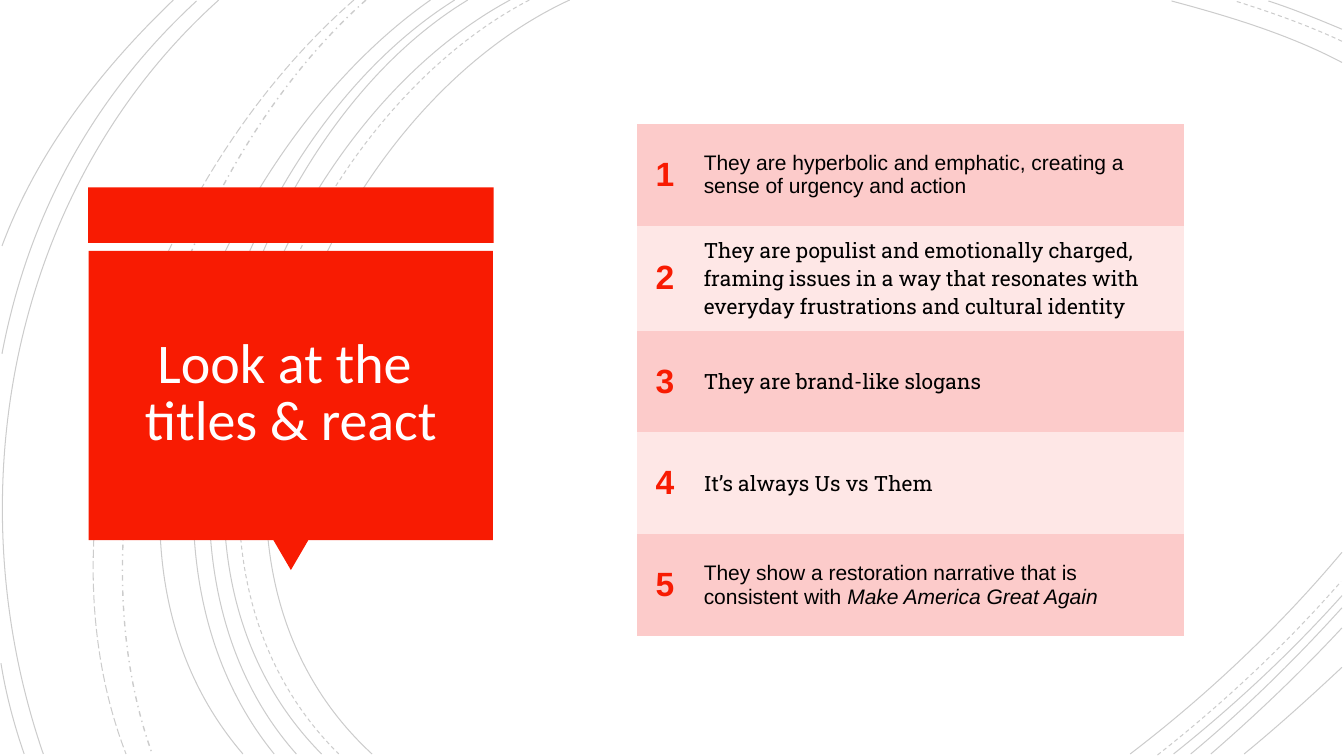
from lxml.etree import SubElement
from pptx import Presentation
from pptx.dml.color import RGBColor
from pptx.enum.dml import MSO_LINE
from pptx.enum.shapes import MSO_SHAPE
from pptx.enum.text import MSO_ANCHOR, PP_ALIGN
from pptx.oxml.ns import qn
from pptx.util import Inches, Pt

RED, WHITE, BLACK = "F81B02", "FFFEFF", "000000"
BANDS = ("FCCBCA", "FEE7E6")
NO_STYLE = "{2D5ABB26-0587-4C30-8999-92F81FD0307C}"
SOLID, DASH = MSO_LINE.SOLID, MSO_LINE.DASH
BOTTOM = 74.8

# Arcs from the top edge to the bottom: start column, two bends, end column, dash
LONG_ARCS = [
    (56.5, (31.5, 11.5), (14.3, 54), 36.9, SOLID),
    (52.5, (28.5, 12.5), (12.3, 53.7), 33.6, DASH),
    (50.6, (27, 12.7), (11, 53.7), 31.9, SOLID),
    (46.4, (24.4, 13.3), (11, 54.1), 29.4, SOLID),
    (45.1, (23.1, 13.8), (9.7, 53.3), 27.2, SOLID),
    (42.7, (21.7, 14.7), (5.3, 52.9), 24.1, SOLID),
    (36.3, (17.6, 16.6), (6.5, 50.9), 15.1, MSO_LINE.DASH_DOT),
    (35.1, (15.7, 16.9), (2.9, 49.9), 12.5, MSO_LINE.LONG_DASH),
    (21.7, (1.1, 18.5), (-4.6, 49), 4.3, SOLID),
]
# Short arcs across the corners: four points, dash
CORNER_ARCS = [
    ((133.1, 6.2), (127.8, 3.4), (121.8, 1.6), (116.2, 0.1), SOLID),
    ((133.1, 4.1), (129.7, 2.5), (126, 1.2), (122.5, 0.1), DASH),
    ((133.1, 2.9), (130.7, 1.9), (128.3, 0.9), (125.8, 0.1), SOLID),
    ((112.1, BOTTOM), (119.7, 69), (126.9, 62.2), (133.1, 54.8), SOLID),
    ((114.8, 74.9), (121.3, 69.8), (127.5, 64), (133, 57.7), DASH),
    ((116.4, BOTTOM), (122.3, 70.1), (128, 64.8), (133.1, 59.1), SOLID),
    ((118.1, BOTTOM), (123.4, 70.4), (128.4, 65.5), (133.1, 60.3), SOLID),
    ((120.1, BOTTOM), (124.6, 70.9), (129, 66.7), (133.1, 62.3), SOLID),
    ((123.4, BOTTOM), (126.7, 72.1), (129.9, 69.2), (133.1, 66.2), SOLID),
    ((19.5, 0.1), (9.2, 9.6), (2.8, 21.4), (0.2, 35.1), SOLID),
    ((0.1, 65.8), (0.6, 68.9), (1.4, 71.9), (2.4, BOTTOM), SOLID),
    ((17.2, 0), (10, 6.9), (3.7, 15), (0.2, 24.4), SOLID),
]
# Each point: row height, font and a list of (text, italic) pieces
POINTS = [
    (10.1, "Arial",
     [("They are hyperbolic and emphatic, creating a sense of urgency and action", False)]),
    (10.4, "Roboto Slab",
     [("They are populist and emotionally charged, framing issues in a way that "
       "resonates with everyday frustrations and cultural identity", False)]),
    (10.1, "Roboto Slab", [("They are brand-like slogans", False)]),
    (10.1, "Roboto Slab", [("It’s always Us vs Them", False)]),
    (10.1, "Arial",
     [("They show a restoration narrative that is consistent with ", False),
      ("Make America Great Again", True)]),
]


def colour(value):
    return RGBColor.from_string(value)


def unit(count):
    """Length of a number of grid columns or rows, ten to the inch."""
    return Inches(count / 10)


def write(para, pieces, font="Arial", size=15, color=BLACK, bold=False,
          align=PP_ALIGN.LEFT, spacing=1.0):
    """Fill a paragraph with (text, italic) pieces; None breaks the line."""
    para.alignment, para.line_spacing = align, spacing
    for piece in pieces:
        if piece is None:
            para.add_line_break()
            continue
        span = para.add_run()
        span.text, span.font.italic = piece
        span.font.name, span.font.size, span.font.bold = font, Pt(size), bold
        span.font.color.rgb = colour(color)


class Canvas:
    def __init__(self, slide):
        self.shapes = slide.shapes

    def arc(self, *points, dash):
        """Draw one cubic curve through its start, two bends and end."""
        start, *rest = [tuple(map(unit, point)) for point in points]
        builder = self.shapes.build_freeform(*start, scale=1.0)
        builder.add_line_segments(rest, close=False)
        shape = builder.convert_to_shape()
        # Join the three straight segments into one curve
        outline = shape.element.find(".//" + qn("a:path"))
        segments = outline.findall(qn("a:lnTo"))
        curve = SubElement(outline, qn("a:cubicBezTo"))
        for segment in segments:
            curve.append(segment[0])
            outline.remove(segment)
        shape.shadow.inherit = False
        shape.fill.background()
        shape.line.color.rgb = colour(BLACK)
        shape.line.width = Pt(1 if dash == MSO_LINE.DASH_DOT else 0.75)
        shape.line.dash_style = dash
        tint = shape.element.spPr.find(".//" + qn("a:ln")).find(".//" + qn("a:srgbClr"))
        SubElement(tint, qn("a:alpha"), val="20000")

    def block(self, kind, *place, fill=RED, rotation=0):
        shape = self.shapes.add_shape(kind, *map(unit, place))
        shape.shadow.inherit = False
        shape.fill.solid()
        shape.fill.fore_color.rgb = colour(fill)
        shape.line.fill.background()
        shape.rotation = rotation

    def text(self, pieces, *place, inset, **style):
        frame = self.shapes.add_textbox(*map(unit, place)).text_frame
        frame.word_wrap, frame.vertical_anchor = True, MSO_ANCHOR.MIDDLE
        frame.margin_left = frame.margin_right = unit(inset)
        frame.margin_top = frame.margin_bottom = unit(inset)
        write(frame.paragraphs[0], pieces, **style)

    def numbered_table(self, points, *place, widths):
        holder = self.shapes.add_table(len(points), 2, *map(unit, place))
        holder.element.find(".//" + qn("a:tableStyleId")).text = NO_STYLE
        table = holder.table
        table.first_row = table.horz_banding = False
        for column, width in zip(table.columns, widths):
            column.width = unit(width)
        for index, (height, font, pieces) in enumerate(points):
            table.rows[index].height = unit(height)
            number, point = table.rows[index].cells
            for cell in (number, point):
                cell.fill.solid()
                cell.fill.fore_color.rgb = colour(BANDS[index % 2])
                cell.vertical_anchor = MSO_ANCHOR.MIDDLE
                cell.margin_left = cell.margin_right = unit(1.1)
                cell.margin_top = cell.margin_bottom = unit(1.1)
            write(number.text_frame.paragraphs[0], [(str(index + 1), False)], size=24,
                  color=RED, bold=True, align=PP_ALIGN.CENTER)
            write(point.text_frame.paragraphs[0], pieces, font=font)


def main():
    deck = Presentation()
    deck.slide_width, deck.slide_height = Inches(13.33), Inches(7.5)
    page = Canvas(deck.slides.add_slide(deck.slide_layouts[6]))

    # Background arcs
    for start, first, second, end, dash in LONG_ARCS:
        page.arc((start, 0), first, second, (end, BOTTOM), dash=dash)
    for *points, dash in CORNER_ARCS:
        page.arc(*points, dash=dash)

    # Title panel
    page.block(MSO_SHAPE.RECTANGLE, 8.75, 18.6, 40.2, 5.5)
    page.block(MSO_SHAPE.ISOSCELES_TRIANGLE, 27.1, 53.55, 3.5, 3, rotation=180)
    page.block(MSO_SHAPE.RECTANGLE, 8.8, 24.9, 40.1, 28.7)
    page.text([("Look at the ", False), None, ("titles & react", False)],
              9.7, 25.7, 38.3, 26.9, inset=2.5, font="Calibri", size=40,
              color=WHITE, align=PP_ALIGN.CENTER, spacing=0.85)

    # Numbered points
    page.numbered_table(POINTS, 63.2, 12.3, 54.2, 50.8, widths=(5.5, 48.7))

    deck.save("out.pptx")


if __name__ == "__main__":
    main()
